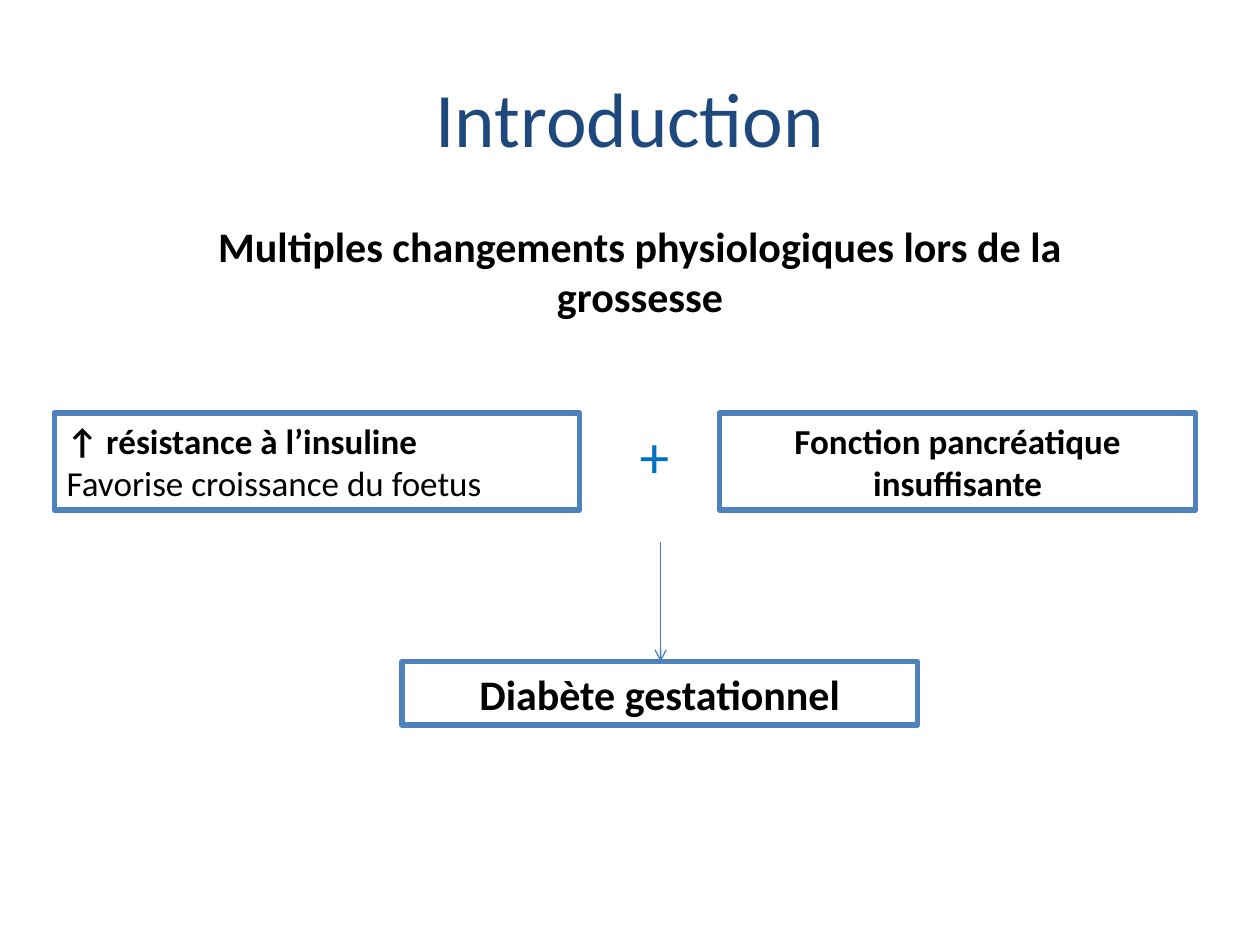
import pptx
import pptx.util
import pptx.dml.color
import pptx.enum.shapes
import pptx.enum.text
import pptx.oxml
import pptx.oxml.ns
from dataclasses import dataclass

Pt = pptx.util.Pt
ALIGN = pptx.enum.text.PP_ALIGN
ANCHOR = pptx.enum.text.MSO_ANCHOR


@dataclass(frozen=True)
class Theme:
    font: str = "Calibri"
    title: str = "1F497D"
    text: str = "000000"
    plus: str = "0070C0"
    border: str = "4F81BD"
    arrow: str = "4B7EBC"
    title_size: int = 44
    plus_size: int = 34
    lead_size: int = 24
    cause_size: int = 20
    border_width: float = 3
    arrow_width: float = 0.75


THEME = Theme()
CAUSE_TOP, CAUSE_HEIGHT = 236, 55.5
RESULT_TOP = 378
ARROW_X, ARROW_TOP = 377.5, 309.6

TITLE = ("Introduction", (36, 21.6, 648, 90))
TEXTS = [
    (["Multiples changements physiologiques lors de la grossesse"],
     (93.6, 122.4, 544.3, 65.5), THEME.lead_size, THEME.text, True, ALIGN.CENTER),
    (["+"], (354.2, CAUSE_TOP, 39.6, 48.2),
     THEME.plus_size, THEME.plus, False, ALIGN.CENTER),
]
BOXES = [
    (["↑ résistance à l’insuline", "Favorise croissance du foetus"],
     (31, CAUSE_TOP, 300.2, CAUSE_HEIGHT), THEME.cause_size, ALIGN.LEFT),
    (["Fonction pancréatique insuffisante"],
     (411.1, CAUSE_TOP, 272.2, CAUSE_HEIGHT), THEME.cause_size, ALIGN.CENTER),
    (["Diabète gestationnel"],
     (229.7, RESULT_TOP, 294.5, 36.3), THEME.lead_size, ALIGN.CENTER),
]


def rgb(color):
    return pptx.dml.color.RGBColor.from_string(color)


def write(shape, lines, size, color, bold, align, anchor=ANCHOR.TOP):
    frame = shape.text_frame
    frame.text = "\n".join(lines)
    frame.word_wrap = True
    frame.vertical_anchor = anchor
    for index, paragraph in enumerate(frame.paragraphs):
        paragraph.alignment = align
        for run in paragraph.runs:
            run.font.name = THEME.font
            run.font.size = Pt(size)
            run.font.bold = bold and index == 0
            run.font.color.rgb = rgb(color)


def add_box(slide, lines, place, size, align):
    box = slide.shapes.add_shape(
        pptx.enum.shapes.MSO_SHAPE.RECTANGLE, *map(Pt, place))
    box.shadow.inherit = False
    box.fill.background()
    box.line.color.rgb = rgb(THEME.border)
    box.line.width = Pt(THEME.border_width)
    write(box, lines, size, THEME.text, True, align, ANCHOR.MIDDLE)


def add_arrow(slide):
    arrow = slide.shapes.add_connector(
        pptx.enum.shapes.MSO_CONNECTOR.STRAIGHT,
        *map(Pt, (ARROW_X, ARROW_TOP, ARROW_X, RESULT_TOP)))
    arrow.line.color.rgb = rgb(THEME.arrow)
    arrow.line.width = Pt(THEME.arrow_width)
    properties = arrow.line._get_or_add_ln()
    namespace = pptx.oxml.ns.nsdecls("a")
    properties.append(pptx.oxml.parse_xml(f'<a:tailEnd {namespace} type="arrow"/>'))
    properties.getparent().append(pptx.oxml.parse_xml(f"<a:effectLst {namespace}/>"))


def main():
    deck = pptx.Presentation()
    deck.slide_width, deck.slide_height = Pt(720), Pt(540)
    slide = deck.slides.add_slide(deck.slide_layouts[5])

    heading, place = TITLE
    title = slide.shapes.title
    title.left, title.top, title.width, title.height = map(Pt, place)
    write(title, [heading], THEME.title_size, THEME.title, False,
          ALIGN.CENTER, ANCHOR.MIDDLE)

    for lines, place, *style in TEXTS:
        write(slide.shapes.add_textbox(*map(Pt, place)), lines, *style)
    for box in BOXES:
        add_box(slide, *box)
    add_arrow(slide)
    deck.save("out.pptx")


if __name__ == "__main__":
    main()
